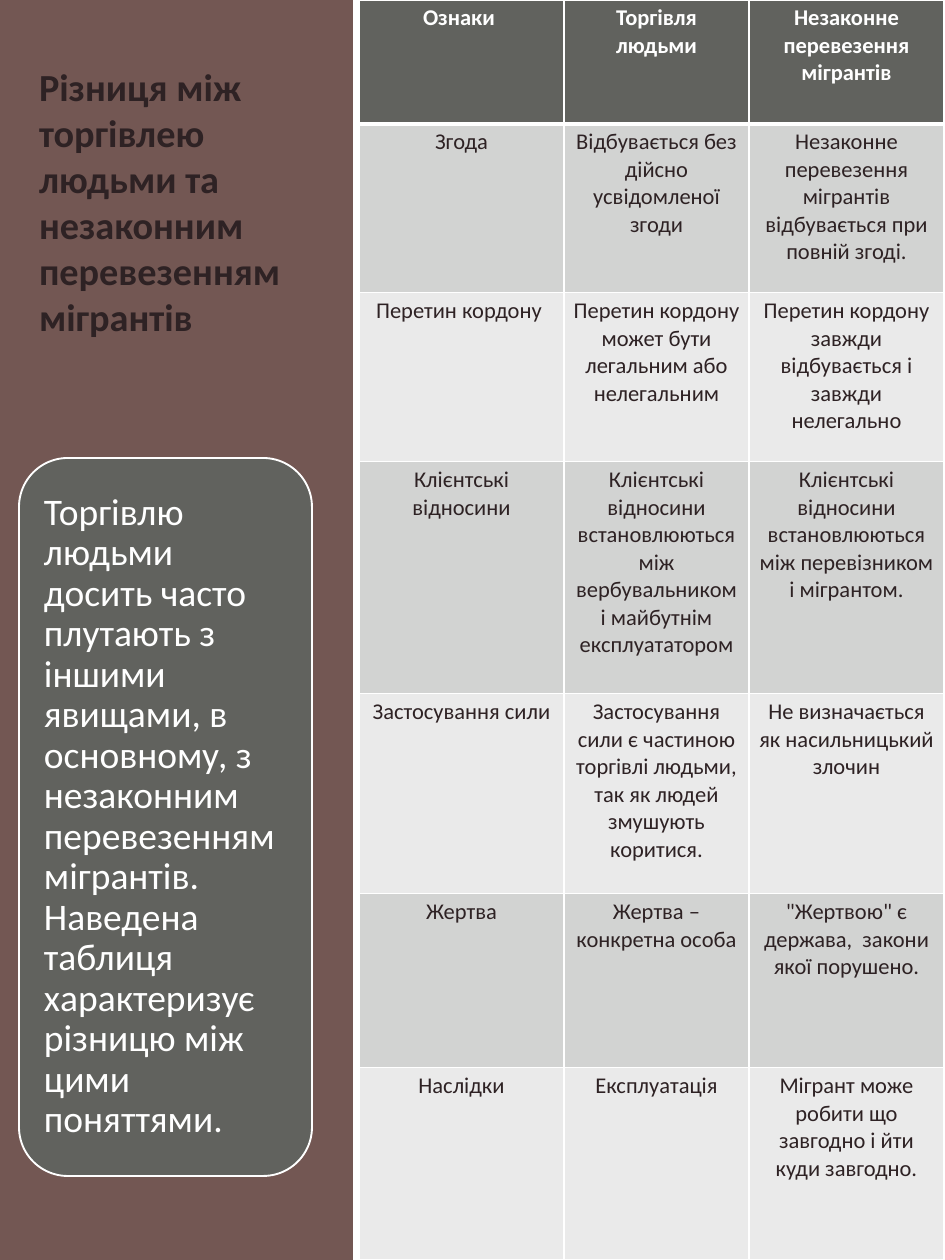
from lxml.etree import SubElement
from pptx import Presentation
from pptx.dml.color import RGBColor
from pptx.enum.shapes import MSO_SHAPE
from pptx.enum.text import MSO_ANCHOR, PP_ALIGN
from pptx.oxml.ns import qn
from pptx.util import Pt

PX = 914400 // 90
COLORS = {
    "panel": "48231E", "ink": "2E2224", "white": "FFFFFF",
    "slate": "61625E", "odd": "D2D3D2", "even": "EAEAEA",
}
TITLE = "Різниця між торгівлею людьми та незаконним перевезенням мігрантів"
NOTE = (
    "Торгівлю людьми досить часто плутають з іншими явищами, в основному, "
    "з незаконним перевезенням мігрантів. Наведена таблиця характеризує "
    "різницю між цими поняттями."
)
ROWS = [
    ("Ознаки ", "Торгівля людьми", "Незаконне перевезення мігрантів"),
    ("Згода", "Відбувається без дійсно усвідомленої згоди",
     "Незаконне перевезення мігрантів відбувається при повній згоді."),
    ("Перетин кордону ", "Перетин кордону может бути легальним або нелегальним",
     "Перетин кордону завжди відбувається і завжди нелегально"),
    ("Клієнтські відносини",
     "Клієнтські відносини встановлюються між вербувальником і майбутнім експлуататором",
     "Клієнтські відносини встановлюються між перевізником і мігрантом."),
    ("Застосування сили",
     "Застосування сили є частиною торгівлі людьми, так як людей змушують коритися.",
     "Не визначається як насильницький злочин"),
    ("Жертва", "Жертва – конкретна особа",
     "\"Жертвою\" є держава,  закони якої порушено."),
    ("Наслідки", "Експлуатація",
     "Мігрант може робити що завгодно і йти куди завгодно."),
]
COLUMN_WIDTHS = [205, 185, 195]
ROW_HEIGHTS = [124, 169, 169, 232, 200, 174, 192]
TABLE_LEFT = 359

TITLE_FONT = {"name": "Calibri", "size": Pt(30.6), "bold": True}
NOTE_FONT = {"name": "Calibri", "size": Pt(30), "bold": False}
HEAD_FONT = {"name": "Calibri", "size": Pt(18), "bold": True}
CELL_FONT = {**HEAD_FONT, "bold": False}


def color(name):
    return RGBColor.from_string(COLORS[name])


def place(*lengths):
    return [length * PX for length in lengths]


def write(para, text, font, ink):
    span = para.add_run()
    span.text = text
    for key, value in font.items():
        setattr(span.font, key, value)
    span.font.color.rgb = color(ink)


def add_panel(slide, kind, bounds, fill):
    panel = slide.shapes.add_shape(kind, *place(*bounds))
    panel.shadow.inherit = False
    panel.fill.solid()
    panel.fill.fore_color.rgb = color(fill)
    panel.line.fill.background()
    return panel


def add_text(slide, bounds, text, font, ink, anchor, insets):
    box = slide.shapes.add_textbox(*place(*bounds))
    frame = box.text_frame
    frame.word_wrap = True
    frame.vertical_anchor = anchor
    for side, inset in zip(("left", "top", "right", "bottom"), insets):
        setattr(frame, f"margin_{side}", inset * PX)
    write(frame.paragraphs[0], text, font, ink)
    return frame.paragraphs[0]


def add_borders(cell, widths):
    properties = cell._tc.get_or_add_tcPr()
    for side, width in widths.items():
        line = SubElement(properties, qn(f"a:ln{side}"), w=str(Pt(width)))
        fill = SubElement(line, qn("a:solidFill"))
        SubElement(fill, qn("a:srgbClr"), val=COLORS["white"])


def add_comparison(slide):
    bounds = place(TABLE_LEFT, 0, sum(COLUMN_WIDTHS), sum(ROW_HEIGHTS))
    table = slide.shapes.add_table(len(ROWS), len(COLUMN_WIDTHS), *bounds).table
    for column, width in zip(table.columns, COLUMN_WIDTHS):
        column.width = width * PX
    for row, height in zip(table.rows, ROW_HEIGHTS):
        row.height = height * PX
    for r, texts in enumerate(ROWS):
        font, ink = (CELL_FONT, "ink") if r else (HEAD_FONT, "white")
        fill = ("even", "odd")[r % 2] if r else "slate"
        borders = {"L": 1, "R": 1, "T": 3 if r == 1 else 1, "B": 1 if r else 3}
        for c, text in enumerate(texts):
            cell = table.cell(r, c)
            add_borders(cell, borders)
            cell.fill.solid()
            cell.fill.fore_color.rgb = color(fill)
            para = cell.text_frame.paragraphs[0]
            para.alignment = PP_ALIGN.CENTER
            write(para, text, font, ink)


def main():
    deck = Presentation()
    deck.slide_width, deck.slide_height = place(945, 1260)
    slide = deck.slides.add_slide(deck.slide_layouts[6])

    sidebar = add_panel(slide, MSO_SHAPE.RECTANGLE, (0, 0, 353, 1260), "panel")
    tint = sidebar._element.spPr.find(qn("a:solidFill"))[0]
    SubElement(tint, qn("a:alpha"), val="76000")

    add_text(slide, (26, 28, 293, 317), TITLE, TITLE_FONT, "ink",
             MSO_ANCHOR.BOTTOM, (13, 6, 13, 6))
    add_comparison(slide)

    card = add_panel(slide, MSO_SHAPE.ROUNDED_RECTANGLE, (19, 458, 293, 718), "slate")
    card.line.color.rgb = color("white")
    card.line.width = Pt(1.5)
    note = add_text(slide, (33, 472, 265, 690), NOTE, NOTE_FONT, "white",
                    MSO_ANCHOR.MIDDLE, (11, 11, 11, 11))
    note.line_spacing = 0.9

    deck.save("out.pptx")


if __name__ == "__main__":
    main()
